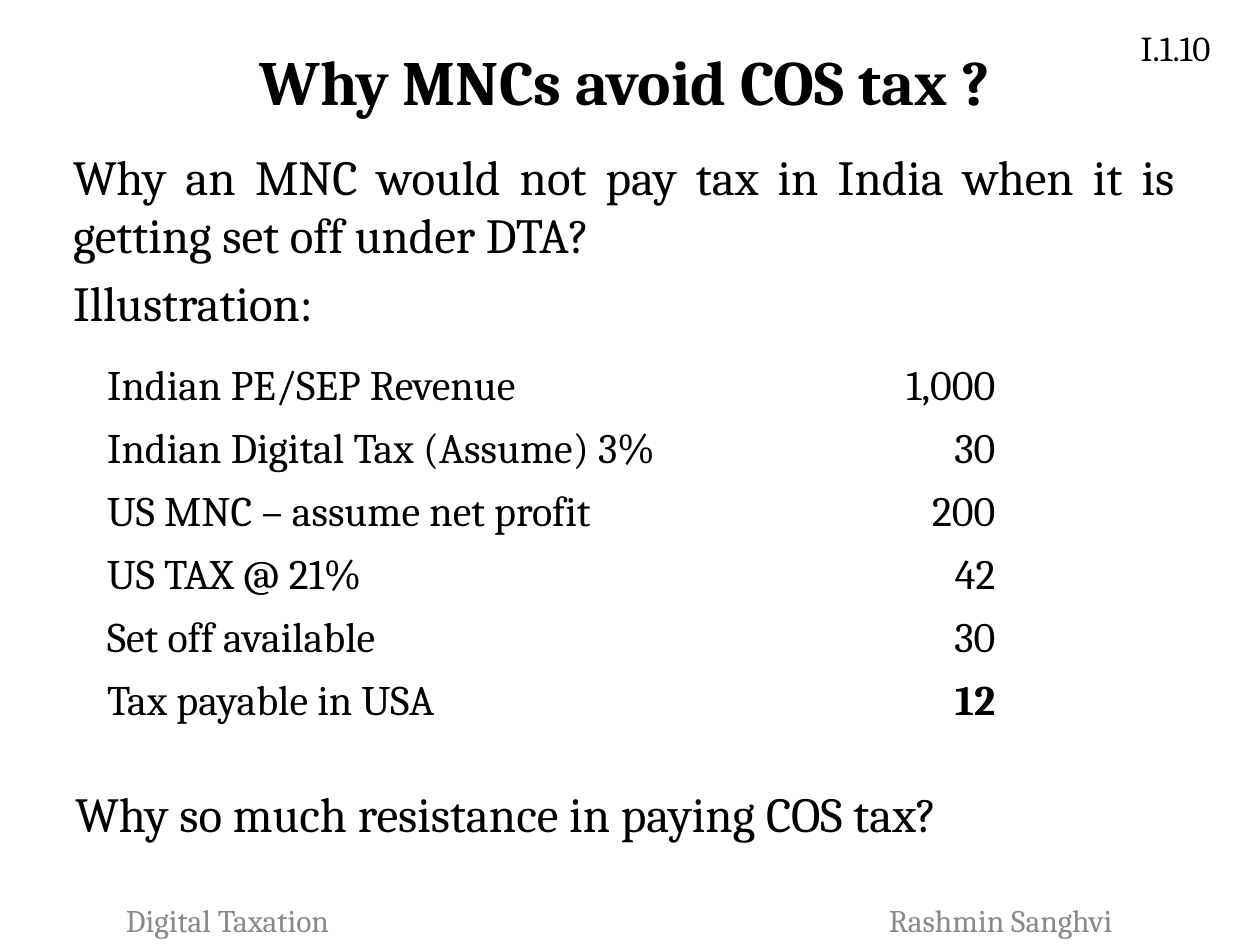
from lxml.etree import SubElement
from pptx import Presentation
from pptx.dml.color import RGBColor
from pptx.enum.text import MSO_ANCHOR as Anchor, PP_ALIGN as Align
from pptx.oxml.ns import qn
from pptx.util import Inches, Pt

COLORS = {"text": "000000", "footer": "898989"}
FONT = "Cambria"

TITLE = "Why MNCs avoid COS tax ?"
PAGE_LABEL = "I.1.10"
INTRO = [
    ("Why an MNC would not pay tax in India when it is getting set off under DTA?", Align.JUSTIFY),
    ("Illustration:", Align.LEFT),
]
TAX_ROWS = [
    ("Indian PE/SEP Revenue", "1,000"),
    ("Indian Digital Tax (Assume) 3%", "30"),
    ("US MNC – assume net profit", "200"),
    ("US TAX @ 21%", "42"),
    ("Set off available", "30"),
    ("Tax payable in USA", "12"),
]
QUESTION = "Why so much resistance in paying COS tax?"
FOOTER = "Digital Taxation\tRashmin Sanghvi"
COLUMN_WIDTHS = (6.08, 1.17)
ROW_HEIGHT = 0.48


def write(p, text, size, color="text", bold=False, align=Align.LEFT):
    p.alignment = align
    r = p.add_run()
    r.text = text
    for name, value in {"name": FONT, "size": Pt(size), "bold": bold}.items():
        setattr(r.font, name, value)
    r.font.color.rgb = RGBColor.from_string(COLORS[color])


def add_box(slide, box, anchor=Anchor.TOP):
    tf = slide.shapes.add_textbox(*map(Inches, box)).text_frame
    tf.word_wrap = True
    tf.vertical_anchor = anchor
    return tf


def add_title(slide):
    sp = slide.shapes.title
    box = {"left": 0.46, "top": 0.3, "width": 9, "height": 0.67}
    for name, value in box.items():
        setattr(sp, name, Inches(value))
    sp.text_frame.vertical_anchor = Anchor.MIDDLE
    write(sp.text_frame.paragraphs[0], TITLE, 36, bold=True, align=Align.CENTER)


def add_intro(slide):
    tf = add_box(slide, (0.42, 1.11, 9, 5.33))
    tf.margin_left = Inches(0.16)
    for i, (text, align) in enumerate(INTRO):
        p = tf.add_paragraph() if i else tf.paragraphs[0]
        p.space_before = Pt(5)
        write(p, text, 28, align=align)


def add_tax_table(slide):
    frame = slide.shapes.add_table(
        len(TAX_ROWS), len(COLUMN_WIDTHS), Inches(0.75), Inches(2.83),
        Inches(sum(COLUMN_WIDTHS)), Inches(ROW_HEIGHT * len(TAX_ROWS)))
    table = frame.table
    table.first_row = table.horz_banding = False
    for column, width in zip(table.columns, COLUMN_WIDTHS):
        column.width = Inches(width)
    for i, row in enumerate(TAX_ROWS):
        for j, text in enumerate(row):
            cell = table.cell(i, j)
            cell.fill.background()
            for side in ("a:lnL", "a:lnR", "a:lnT", "a:lnB"):
                line = cell._tc.get_or_add_tcPr().makeelement(qn(side), {"w": "0"})
                SubElement(line, qn("a:noFill"))
                cell.fill._xPr.find(qn("a:noFill")).addprevious(line)
            is_result = j == 1 and i == len(TAX_ROWS) - 1
            write(cell.text_frame.paragraphs[0], text, 24, bold=is_result,
                  align=Align.RIGHT if j else Align.LEFT)


def add_footer(slide):
    """One line, with the name set against a right tab stop."""
    tf = add_box(slide, (0.33, 7.1, 9.33, 0.4), Anchor.MIDDLE)
    tf.margin_left = Inches(0.67)
    p = tf.paragraphs[0]
    write(p, FOOTER, 18, "footer")
    tabs = SubElement(p._p.get_or_add_pPr(), qn("a:tabLst"))
    SubElement(tabs, qn("a:tab"), pos=str(Inches(7.83)), algn="r")


def main():
    prs = Presentation()
    prs.slide_width, prs.slide_height = Inches(10), Inches(7.5)
    slide = prs.slides.add_slide(prs.slide_layouts[5])
    add_intro(slide)
    add_footer(slide)
    add_title(slide)
    add_tax_table(slide)
    question = add_box(slide, (0.5, 6.17, 8.83, 0.57))
    write(question.paragraphs[0], QUESTION, 28)
    label = add_box(slide, (8.79, 0.13, 1.08, 0.5), Anchor.MIDDLE)
    write(label.paragraphs[0], PAGE_LABEL, 20, align=Align.CENTER)
    prs.save("out.pptx")


if __name__ == "__main__":
    main()
